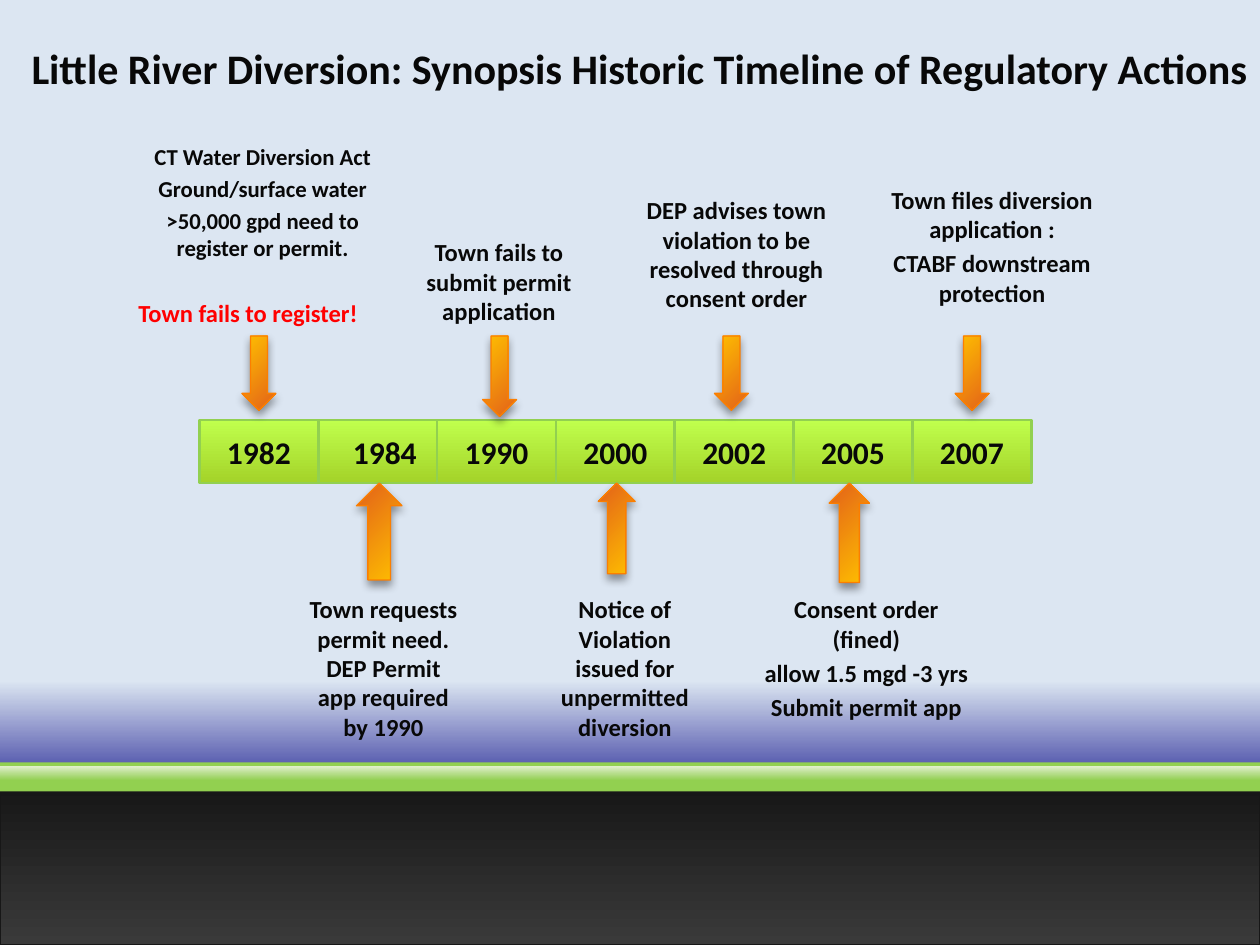
from lxml import etree
from pptx import Presentation
from pptx.dml.color import RGBColor
from pptx.enum.shapes import MSO_SHAPE
from pptx.enum.text import MSO_ANCHOR, PP_ALIGN
from pptx.oxml.ns import qn
from pptx.util import Pt

RECT, ARROW = MSO_SHAPE.RECTANGLE, MSO_SHAPE.DOWN_ARROW
LEFT, MID = PP_ALIGN.LEFT, PP_ALIGN.CENTER
TOP, HALF = MSO_ANCHOR.TOP, MSO_ANCHOR.MIDDLE
INK, RED = "080808", "FF0000"
SKY = [(0, "DCE6F2", 100), (72, "DCE6F2", 100), (87, "000082", 100), (100, "0047FF", 100)]
LIME = [(0, "C0FF4D", 100), (100, "A4D329", 100)]
AMBER = [(0, "FFC000", 100), (100, "E36119", 100)]
COAL = [(0, "171717", 100), (100, "3A3A3A", 100)]
GLOSS = [(0, "F3F3F3", 0), (100, "FFFCF9", 79)]

TITLE = "Little River Diversion: Synopsis Historic Timeline of Regulatory Actions"
YEARS = ["1982", "1984", "1990", "2000", "2002", "2005", "2007"]
INSET = {"1984": 15.2}
ROW = {"left": 114, "top": 240, "wide": 67.9, "high": 36}

DOWN = [(148, 19.4, 42.5), (285.5, 19.4, 46), (418, 19.4, 42.5), (555.5, 19.4, 42.5)]
UP = [(216.7, 26, 55.4), (352.4, 21, 51.8), (485.3, 23, 56.9)]
DOWN_TOP, UP_TOP = 192, 276

NOTES = [
    ((234, 132, 102.2, 73), ["Town fails to submit permit application"]),
    ((360, 108, 121.7, 75), ["DEP advises town violation to be resolved through consent order"]),
    ((426, 336, 138.2, 82), ["Consent order (fined)", "allow 1.5 mgd -3 yrs", "Submit permit app"]),
    ((168, 336, 102.2, 92), ["Town requests permit need. DEP Permit app required by 1990"]),
    ((306, 336, 102.2, 92), ["Notice of Violation issued for unpermitted diversion"]),
    ((492, 102, 149.8, 78), ["Town files diversion application :", "CTABF downstream protection"]),
]
ACT_BOX = (72, 78, 156, 156)
ACT = ["CT Water Diversion Act", "Ground/surface water", ">50,000 gpd need to register or permit."]
ALERT = "Town fails to register!"


def rgb(code):
    return RGBColor.from_string(code)


def blend(fill, root, stops, angle):
    fill.gradient()
    grad = next(root.iter(qn("a:gradFill")))
    rows = grad.find(qn("a:gsLst"))
    for old in list(rows):
        rows.remove(old)
    for pos, code, alpha in stops:
        stop = etree.SubElement(rows, qn("a:gs"), pos=str(pos * 1000))
        tint = etree.SubElement(stop, qn("a:srgbClr"), val=code)
        if alpha < 100:
            etree.SubElement(tint, qn("a:alpha"), val=str(alpha * 1000))
    grad.find(qn("a:lin")).set("ang", str(angle * 60000))


def draw(slide, kind, box, fill, angle=90, line=None, width=0.75):
    shape = slide.shapes.add_shape(kind, *map(Pt, box))
    shape.shadow.inherit = False
    if isinstance(fill, str):
        shape.fill.solid()
        shape.fill.fore_color.rgb = rgb(fill)
    else:
        blend(shape.fill, shape._element.spPr, fill, angle)
    if line:
        shape.line.color.rgb = rgb(line)
        shape.line.width = Pt(width)
    else:
        shape.line.fill.background()
    return shape


def point(slide, mid, top, wide, high, turn):
    shape = draw(slide, ARROW, (mid - wide / 2, top, wide, high), AMBER, 45, "FC7E00")
    shape.rotation = turn
    list_el = shape._element.spPr.find(qn("a:effectLst"))
    shade = etree.SubElement(list_el, qn("a:outerShdw"), blurRad=str(Pt(5)),
                             dist=str(Pt(3)), dir="5400000", rotWithShape="0")
    tint = etree.SubElement(shade, qn("a:srgbClr"), val="000000")
    etree.SubElement(tint, qn("a:alpha"), val="40000")


def write(shape, lines, anchor=TOP, side=7.2):
    frame = shape.text_frame
    look = {"word_wrap": True, "vertical_anchor": anchor, "margin_left": Pt(side),
            "margin_right": Pt(min(side, 7.2)), "margin_top": Pt(3.6), "margin_bottom": Pt(3.6)}
    for name, value in look.items():
        setattr(frame, name, value)
    for i, (text, size, code, align, gap) in enumerate(lines):
        para = frame.paragraphs[0] if i == 0 else frame.add_paragraph()
        para.alignment = align
        para.space_before = Pt(gap if i else 0)
        run = para.add_run()
        run.text = text
        for name, value in {"name": "Calibri", "size": Pt(size), "bold": True}.items():
            setattr(run.font, name, value)
        run.font.color.rgb = rgb(code)


def label(slide, box, lines, **opts):
    write(slide.shapes.add_textbox(*map(Pt, box)), lines, **opts)


def main():
    deck = Presentation()
    deck.slide_width, deck.slide_height = Pt(720), Pt(540)
    slide = deck.slides.add_slide(deck.slide_layouts[6])
    blend(slide.background.fill, slide._element, SKY, 90)

    draw(slide, RECT, (0, 450, 720, 90), COAL, 90, "171717")
    draw(slide, RECT, (0, 435.6, 720, 16.6), "92D050")
    draw(slide, RECT, (0, 437.8, 720, 7.9), GLOSS, 270)

    for i, year in enumerate(YEARS):
        box = (ROW["left"] + i * ROW["wide"], ROW["top"], ROW["wide"], ROW["high"])
        cell = draw(slide, RECT, box, LIME, 90, "92D050", 1.5)
        write(cell, [(year, 18, INK, MID, 0)], anchor=HALF, side=INSET.get(year, 7.2))

    for top, turn, group in ((DOWN_TOP, 0, DOWN), (UP_TOP, 180, UP)):
        for mid, wide, high in group:
            point(slide, mid, top, wide, high, turn)

    label(slide, (18, 15.1, 702, 47.5), [(TITLE, 24, INK, LEFT, 0)], anchor=HALF, side=0)
    for box, texts in NOTES:
        label(slide, box, [(text, 14, INK, MID, 2.8) for text in texts])
    act = [(text, 13, INK, MID, 2.6) for text in ACT]
    label(slide, ACT_BOX, act + [(ALERT, 14, RED, LEFT, 21)])

    deck.save("out.pptx")


if __name__ == "__main__":
    main()
